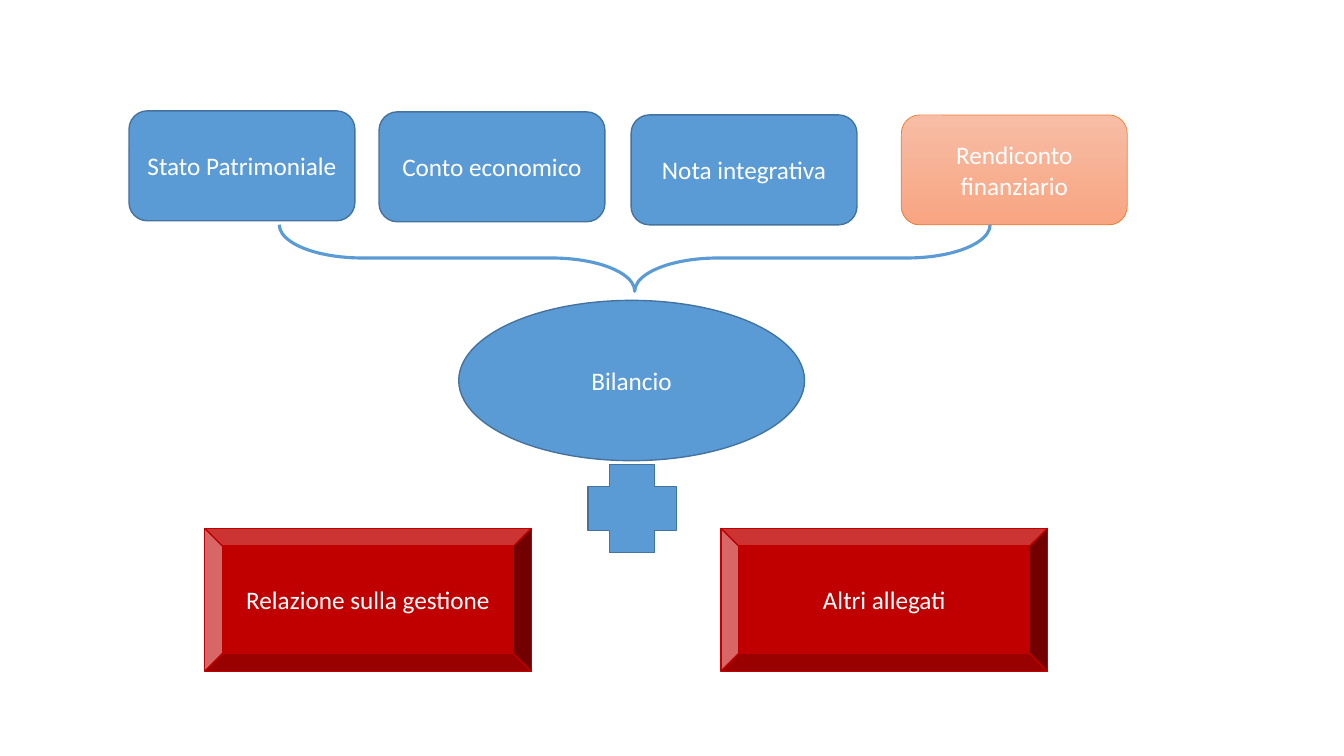
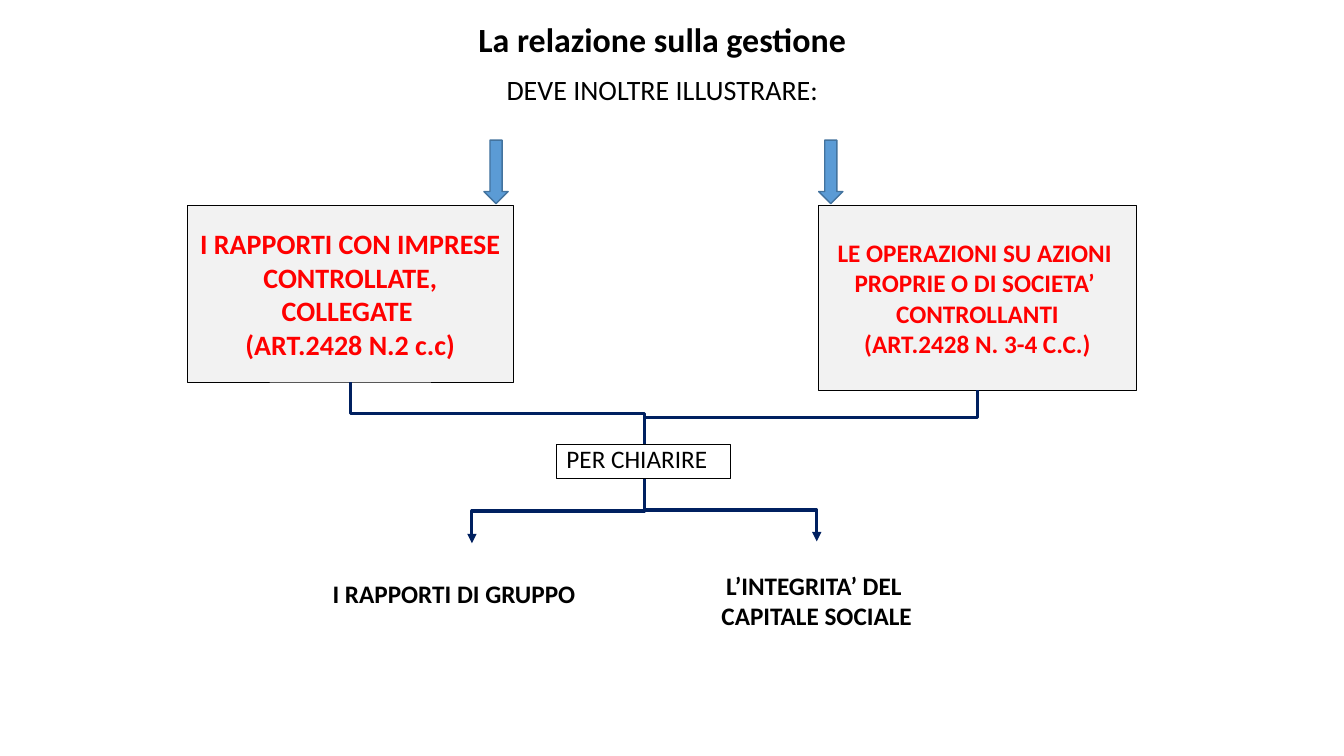
from dataclasses import dataclass

from lxml import etree
from pptx import Presentation
from pptx.dml.color import RGBColor
from pptx.enum.shapes import MSO_CONNECTOR, MSO_SHAPE
from pptx.enum.text import MSO_ANCHOR, PP_ALIGN
from pptx.oxml.ns import qn
from pptx.util import Emu, Pt

EMU_PER_PX = 9144
BLANK_LAYOUT = 6

ROUNDED = MSO_SHAPE.ROUNDED_RECTANGLE
RECTANGLE = MSO_SHAPE.RECTANGLE
OVAL = MSO_SHAPE.OVAL
BEVEL = MSO_SHAPE.BEVEL
PLUS = MSO_SHAPE.CROSS
BRACE = MSO_SHAPE.RIGHT_BRACE
DOWN_ARROW = MSO_SHAPE.DOWN_ARROW
ELBOW = MSO_CONNECTOR.ELBOW
LEFT, CENTER = PP_ALIGN.LEFT, PP_ALIGN.CENTER
TOP, MIDDLE, BOTTOM = MSO_ANCHOR.TOP, MSO_ANCHOR.MIDDLE, MSO_ANCHOR.BOTTOM


@dataclass(frozen=True)
class Theme:
    font: str = "Calibri"
    blue: str = "5B9BD5"
    blue_edge: str = "43739E"
    navy: str = "002060"
    dark_red: str = "C00000"
    red: str = "FF0000"
    orange: str = "ED7D31"
    peach: tuple = ("F7BDA5", "F8A582")
    grey: str = "F2F2F2"
    black: str = "000000"
    white: str = "FFFFFF"
    title: float = 24.2
    large: float = 20
    body: float = 18
    hairline: float = 0.5
    thin: float = 0.75
    edge: float = 1
    thick: float = 2.25


def px(length):
    return Emu(round(length * EMU_PER_PX))


class Deck:
    def __init__(self, theme):
        self.theme = theme
        self.prs = Presentation()
        self.prs.slide_width, self.prs.slide_height = px(1333), px(750)
        self.slide = None

    def new_slide(self):
        layout = self.prs.slide_layouts[BLANK_LAYOUT]
        self.slide = self.prs.slides.add_slide(layout)

    def set_text(self, holder, text, size=None, color=None, bold=False,
                 align=CENTER, anchor=MIDDLE, wrap=True):
        frame = holder.text_frame
        frame.text = text
        frame.word_wrap = wrap
        frame.vertical_anchor = anchor
        for paragraph in frame.paragraphs:
            paragraph.alignment = align
            for run in paragraph.runs:
                run.font.name = self.theme.font
                run.font.size = Pt(size or self.theme.body)
                run.font.bold = bold
                run.font.color.rgb = RGBColor.from_string(color or self.theme.black)

    def label(self, box, text, **style):
        holder = self.slide.shapes.add_textbox(*map(px, box))
        self.set_text(holder, text, **style)

    def shape(self, kind, box, fill, line, width):
        shape = self.slide.shapes.add_shape(kind, *map(px, box))
        shape.shadow.inherit = False
        if fill is None:
            shape.fill.background()
        elif isinstance(fill, tuple):
            shape.fill.gradient()
            shape.fill.gradient_angle = 270
            for stop, color in zip(shape.fill.gradient_stops, fill):
                stop.color.rgb = RGBColor.from_string(color)
        else:
            shape.fill.solid()
            shape.fill.fore_color.rgb = RGBColor.from_string(fill)
        shape.line.color.rgb = RGBColor.from_string(line)
        shape.line.width = Pt(width)
        return shape

    def block(self, kind, box, text="", fill=None, line=None, width=None):
        shape = self.shape(kind, box, fill or self.theme.blue,
                           line or self.theme.blue_edge, width or self.theme.edge)
        if text:
            self.set_text(shape, text, color=self.theme.white)

    def frame(self, box, text, fill, width, **style):
        shape = self.shape(RECTANGLE, box, fill, self.theme.black, width)
        self.set_text(shape, text, wrap=False, **style)

    def brace_below(self, box):
        left, top, width, height = box
        upright = (left + (width - height) / 2, top + (height - width) / 2,
                   height, width)
        brace = self.shape(BRACE, upright, None, self.theme.blue, self.theme.thick)
        brace.rotation = 90
        brace.adjustments[0] = 1.25

    def vertical_elbow(self, start, end, arrow=False):
        (x1, y1), (x2, y2) = start, end
        center_x, center_y = (x1 + x2) / 2, (y1 + y2) / 2
        side = 1 if x2 < x1 else -1
        along, across = side * (y2 - y1) / 2, abs(x2 - x1) / 2
        elbow = self.slide.shapes.add_connector(
            ELBOW, px(center_x - along), px(center_y - across),
            px(center_x + along), px(center_y + across))
        elbow.line.color.rgb = RGBColor.from_string(self.theme.navy)
        elbow.line.width = Pt(self.theme.thick)
        properties = elbow._element.spPr
        rotation = 90 if side == 1 else 270
        properties.find(qn("a:xfrm")).set("rot", str(rotation * 60000))
        if arrow:
            outline = properties.find(qn("a:ln"))
            etree.SubElement(outline, qn("a:tailEnd"), type="triangle")
        etree.SubElement(properties, qn("a:effectLst"))


def balance_sheet(deck):
    theme = deck.theme
    deck.new_slide()
    documents = [(128, 110, "Stato Patrimoniale"), (376, 111, "Conto economico"),
                 (626, 114, "Nota integrativa")]
    for left, top, name in documents:
        deck.block(ROUNDED, (left, top, 224, 109), name)
    deck.block(ROUNDED, (894, 114, 224, 109), "Rendiconto finanziario",
               theme.peach, theme.orange, theme.hairline)
    deck.brace_below((277, 223, 705, 66))
    deck.block(OVAL, (455, 298, 343, 159), "Bilancio")
    deck.block(PLUS, (583, 461, 88, 87))
    for left, name in [(203, "Relazione sulla gestione"), (715, "Altri allegati")]:
        deck.block(BEVEL, (left, 524, 324, 142), name, theme.dark_red, theme.dark_red)


def management_report(deck):
    theme = deck.theme
    deck.new_slide()
    deck.label((207, 16, 900, 46), "La relazione sulla gestione",
               size=theme.title, bold=True)
    deck.label((207, 67, 900, 583), "DEVE INOLTRE ILLUSTRARE:",
               size=theme.large, anchor=TOP)

    topics = [
        ((186, 204, 323, 175), theme.large,
         "I RAPPORTI CON IMPRESE\nCONTROLLATE,\nCOLLEGATE \n(ART.2428 N.2 c.c)"),
        ((812, 204, 315, 183), theme.body,
         "LE OPERAZIONI SU AZIONI \nPROPRIE O DI SOCIETA’ \nCONTROLLANTI\n"
         "(ART.2428 N. 3-4 C.C.)"),
    ]
    purpose = (552, 441, 173, 34)
    purpose_x = 639
    for box, size, text in topics:
        deck.frame(box, text, theme.grey, theme.hairline,
                   size=size, color=theme.red, bold=True)
        left, top, width, height = box
        deck.vertical_elbow((left + width / 2, top + height), (purpose_x, purpose[1]))
    deck.frame(purpose, "PER CHIARIRE", None, theme.thin, align=LEFT, anchor=BOTTOM)

    for tip in [(468, 539), (810, 537)]:
        deck.vertical_elbow((purpose_x, purpose[1] + purpose[3]), tip, arrow=True)
    deck.label((320, 539, 296, 100), "I RAPPORTI DI GRUPPO",
               bold=True, align=LEFT, wrap=False)
    deck.label((684, 537, 252, 117), "L’INTEGRITA’ DEL \nCAPITALE SOCIALE",
               bold=True, wrap=False)

    for left in (480, 812):
        deck.block(DOWN_ARROW, (left, 139, 24, 63))


def main():
    deck = Deck(Theme())
    balance_sheet(deck)
    management_report(deck)
    deck.prs.save("out.pptx")


if __name__ == "__main__":
    main()
